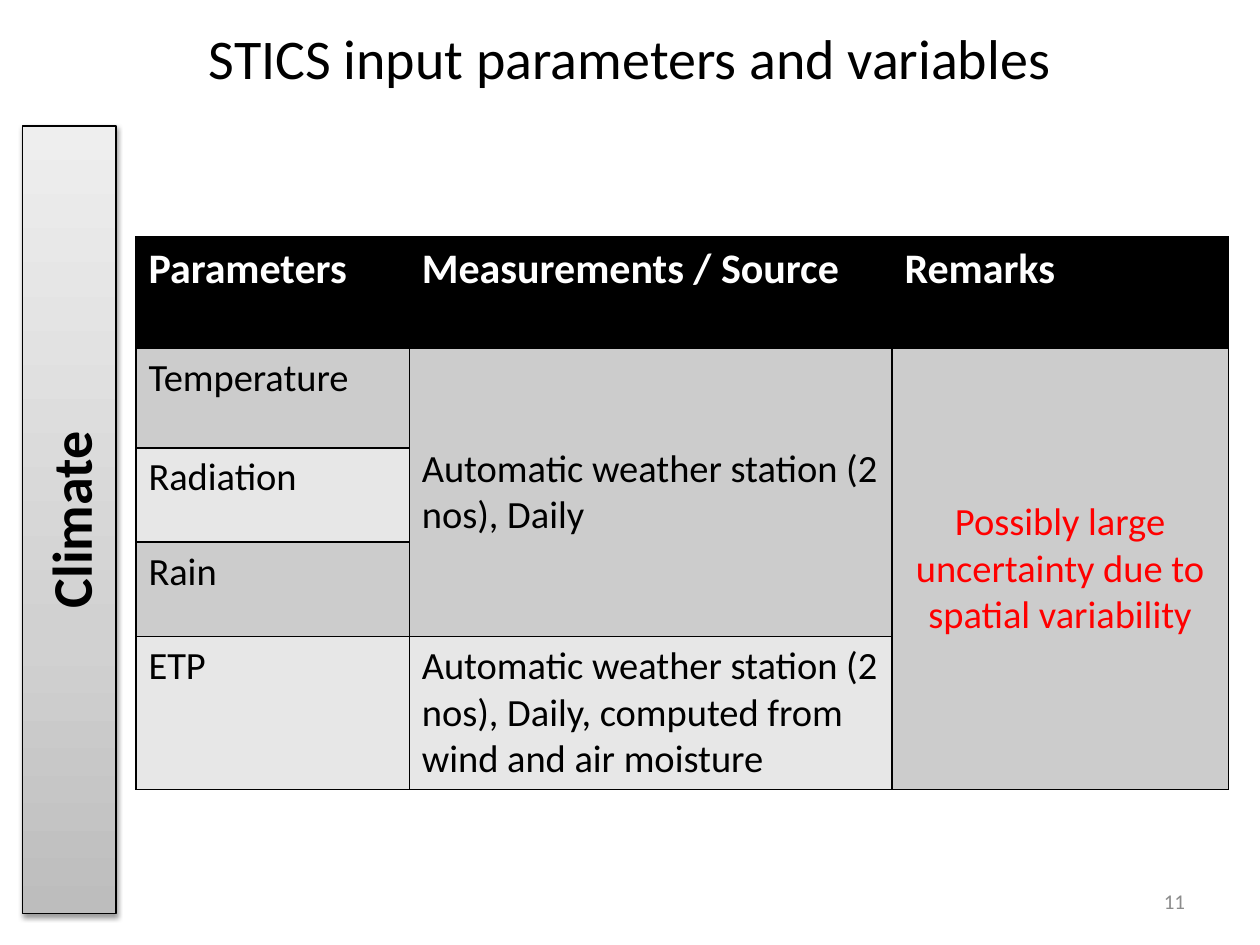
from copy import deepcopy

from lxml import etree
from pptx import Presentation
from pptx.dml.color import RGBColor
from pptx.enum.shapes import MSO_SHAPE
from pptx.enum.text import MSO_ANCHOR, PP_ALIGN
from pptx.oxml.ns import qn
from pptx.util import Cm, Pt

TOP, MIDDLE = MSO_ANCHOR.TOP, MSO_ANCHOR.MIDDLE
LEFT, CENTER, RIGHT = PP_ALIGN.LEFT, PP_ALIGN.CENTER, PP_ALIGN.RIGHT
RECTANGLE = MSO_SHAPE.RECTANGLE

COLORS = {
    "black": "000000", "white": "FFFFFF", "red": "FF0000", "number": "8C8C8C",
    "odd_band": "CCCCCC", "even_band": "E7E7E7",
    "bar_bottom": "BDBDBD", "bar_middle": "D1D1D1", "bar_top": "EEEEEE",
}
COLUMN_WIDTHS = [5.51, 9.73, 6.78]
ROW_HEIGHTS = [2.24, 2.01, 1.9, 1.9, 1.9]
ROWS = [
    ["Parameters", "Measurements / Source", "Remarks"],
    ["Temperature", "Automatic weather station (2 nos), Daily",
     "Possibly large uncertainty due to spatial variability"],
    ["Radiation", "", ""],
    ["Rain", "", ""],
    ["ETP", "Automatic weather station (2 nos), Daily, computed from wind and air moisture", ""],
]
MERGES = [((1, 1), (3, 1)), ((1, 2), (4, 2))]
HEADER = {"size": Pt(24), "bold": True, "color": "white"}
BODY = {"size": Pt(22), "bold": False, "color": "black"}
REMARK = {**BODY, "color": "red"}


def rgb(name):
    return RGBColor.from_string(COLORS[name])


def write(frame, text, style, align=LEFT, anchor=MIDDLE):
    frame.word_wrap = True
    frame.vertical_anchor = anchor
    paragraph = frame.paragraphs[0]
    paragraph.alignment = align
    run = paragraph.add_run()
    run.text = text
    for key, value in {"name": "Calibri", **style}.items():
        if key == "color":
            run.font.color.rgb = rgb(value)
        else:
            setattr(run.font, key, value)


def add_label(slide, box, text, style, align):
    label = slide.shapes.add_textbox(*map(Cm, box))
    write(label.text_frame, text, style, align)


def add_climate_bar(slide, box):
    bar = slide.shapes.add_shape(RECTANGLE, *map(Cm, box))
    bar.fill.gradient()
    bar.fill.gradient_angle = 90
    first_stop = bar._element.spPr.find(".//" + qn("a:gs"))
    first_stop.addnext(deepcopy(first_stop))
    shades = [(0, "bar_bottom"), (0.35, "bar_middle"), (1, "bar_top")]
    for stop, (position, shade) in zip(bar.fill.gradient_stops, shades):
        stop.position = position
        stop.color.rgb = rgb(shade)
    bar.line.color.rgb = rgb("black")
    bar.line.width = Pt(0.75)
    bar.shadow.inherit = False
    effects = bar._element.spPr.find(qn("a:effectLst"))
    shadow = etree.SubElement(effects, qn("a:outerShdw"), blurRad=str(Pt(3.1)),
                              dist=str(Pt(1.6)), dir="5400000", rotWithShape="0")
    shade = etree.SubElement(shadow, qn("a:srgbClr"), val=COLORS["black"])
    etree.SubElement(shade, qn("a:alpha"), val="38000")
    write(bar.text_frame, "Climate", {"size": Pt(32), "bold": True, "color": "black"}, CENTER)
    bar.text_frame._txBody.bodyPr.set("vert", "vert270")


def add_borders(cell):
    properties = cell._tc.get_or_add_tcPr()
    for index, side in enumerate(("lnL", "lnR", "lnT", "lnB")):
        line = etree.Element(qn("a:" + side), w=str(Pt(1)))
        fill = etree.SubElement(line, qn("a:solidFill"))
        etree.SubElement(fill, qn("a:srgbClr"), val=COLORS["black"])
        properties.insert(index, line)


def add_parameter_table(slide, left, top):
    box = (left, top, sum(COLUMN_WIDTHS), sum(ROW_HEIGHTS))
    table = slide.shapes.add_table(len(ROWS), len(COLUMN_WIDTHS), *map(Cm, box)).table
    for column, width in zip(table.columns, COLUMN_WIDTHS):
        column.width = Cm(width)
    for row, height in zip(table.rows, ROW_HEIGHTS):
        row.height = Cm(height)
    for start, end in MERGES:
        table.cell(*start).merge(table.cell(*end))
    for r, texts in enumerate(ROWS):
        band = "black" if r == 0 else "odd_band" if r % 2 else "even_band"
        for c, text in enumerate(texts):
            cell = table.cell(r, c)
            cell.fill.solid()
            cell.fill.fore_color.rgb = rgb(band)
            add_borders(cell)
            if not text:
                continue
            remark = r > 0 and c == 2
            style = HEADER if r == 0 else REMARK if remark else BODY
            anchor = MIDDLE if cell.is_merge_origin else TOP
            write(cell.text_frame, text, style, CENTER if remark else LEFT)
            cell.vertical_anchor = anchor


def main():
    deck = Presentation()
    deck.slide_width, deck.slide_height = Cm(25.4), Cm(19.05)
    slide = deck.slides.add_slide(deck.slide_layouts[6])
    add_parameter_table(slide, 2.74, 4.78)
    add_climate_bar(slide, (0.46, 2.54, 1.88, 15.88))
    add_label(slide, (18.21, 17.65, 5.93, 1.02), "11",
              {"size": Pt(12), "color": "number"}, RIGHT)
    add_label(slide, (1.27, -0.43, 22.86, 3.18), "STICS input parameters and variables",
              {"size": Pt(32), "color": "black"}, CENTER)
    deck.save("out.pptx")


if __name__ == "__main__":
    main()
